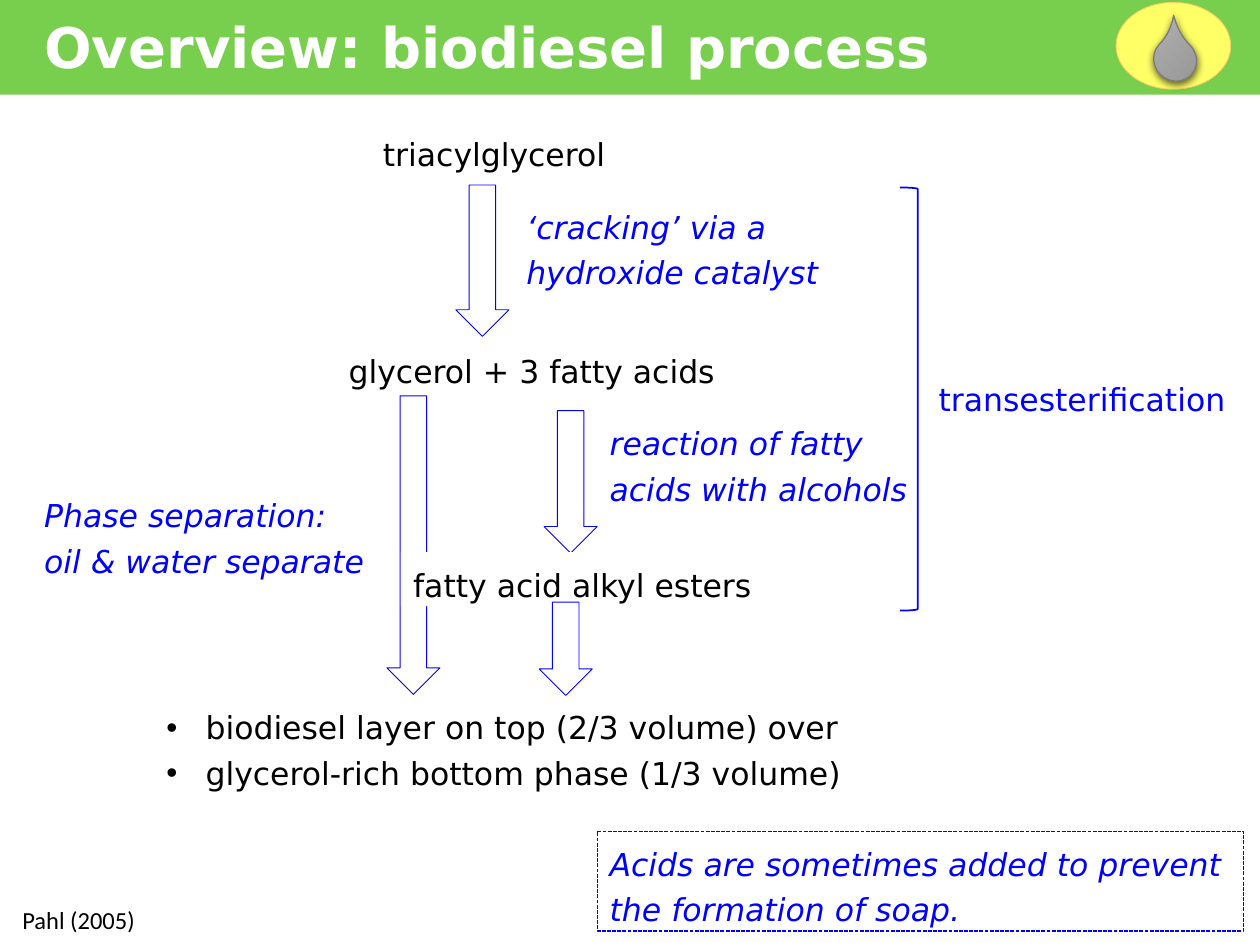
"""Build the biodiesel process overview slide."""
from dataclasses import dataclass

from lxml import etree
from pptx import Presentation
from pptx.dml.color import RGBColor
from pptx.enum.dml import MSO_LINE
from pptx.enum.shapes import MSO_SHAPE
from pptx.enum.text import MSO_ANCHOR, MSO_AUTO_SIZE, PP_ALIGN
from pptx.oxml.ns import qn
from pptx.util import Cm, Pt

RECTANGLE = MSO_SHAPE.RECTANGLE
DOWN_ARROW = MSO_SHAPE.DOWN_ARROW
BRACKET = MSO_SHAPE.RIGHT_BRACKET
OVAL = MSO_SHAPE.OVAL
TEAR = MSO_SHAPE.TEAR
SYS_DASH = MSO_LINE.SQUARE_DOT
TOP = MSO_ANCHOR.TOP
LEFT = PP_ALIGN.LEFT
NO_AUTOFIT = MSO_AUTO_SIZE.NONE

COLOURS = {
    "band": "78CE4D", "white": "FFFFFF", "black": "000000", "blue": "0000FF",
    "sun": "FFFF66", "sun_edge": "FFCC66",
    "drop_top": "AFAFAF", "drop_bottom": "939393", "drop_edge": "7C7C7C",
}
FONT = "DejaVu Sans"
ARROW_WIDTH = 1.07
LINE_HEIGHT = 1.09
TWO_LINES = 2.01


@dataclass
class Label:
    """A text on the slide, in centimetres."""
    lines: list[str]
    left: float
    top: float
    width: float
    height: float = LINE_HEIGHT
    colour: str = "black"
    italic: bool = False
    fill: str | None = None
    edge: str | None = None


@dataclass
class Arrow:
    """A downward process arrow, in centimetres."""
    left: float
    top: float
    height: float


FLOW = [
    Label(["triacylglycerol"], 7.47, 2.44, 5.21),
    Arrow(10.97, 8.28, 2.87),
    Arrow(9.19, 3.73, 3.05),
    Label(["glycerol + 3 fatty acids"], 6.78, 6.81, 8.1),
    Label(["reaction of fatty acids with alcohols"], 12.04, 8.28, 6.78, 2.08, "blue", True),
    Label(["‘cracking’ via a", "hydroxide catalyst"], 10.36, 3.91, 7.39, TWO_LINES, "blue", True),
    Arrow(7.8, 7.98, 6.02),
    Label(["fatty acid alkyl esters"], 8.08, 11.13, 8.46, fill="white"),
    Label(["Phase separation:", "oil & water separate"], 0.64, 9.73, 7.16, TWO_LINES, "blue", True),
    Arrow(10.87, 12.14, 1.88),
    Label(["transesterification"], 18.67, 7.39, 6.58, colour="blue"),
    Label(["Acids are sometimes added to prevent the formation of soap."],
          12.04, 16.76, 13.03, TWO_LINES, "blue", True, edge="blue"),
]
PHASES = ["biodiesel layer on top (2/3 volume) over",
          "glycerol-rich bottom phase (1/3 volume)"]


def rgb(name: str) -> RGBColor:
    """Look up a colour."""
    return RGBColor.from_string(COLOURS[name])


def place(shape, left: float, top: float, width: float, height: float) -> None:
    """Move and size a shape."""
    shape.left, shape.top = Cm(left), Cm(top)
    shape.width, shape.height = Cm(width), Cm(height)


def write(shape, lines: list[str], colour: str, size: float = 18, font: str = FONT,
          bold: bool = False, italic: bool = False, spacing: float = 1.2) -> None:
    """Fill a shape with left-aligned paragraphs."""
    frame = shape.text_frame
    frame.text = "\n".join(lines)
    frame.auto_size = NO_AUTOFIT
    frame.word_wrap = True
    frame.vertical_anchor = TOP
    for paragraph in frame.paragraphs:
        paragraph.alignment = LEFT
        paragraph.line_spacing = spacing
        paragraph.space_before = Pt(0)
        paragraph.font.name, paragraph.font.size = font, Pt(size)
        paragraph.font.bold, paragraph.font.italic = bold, italic
        paragraph.font.color.rgb = rgb(colour)


def draw_shape(shapes, kind, left: float, top: float, width: float, height: float,
               fill: str | None = None, edge: str | None = None, weight: float = 0.5):
    """Add a flat preset shape."""
    shape = shapes.add_shape(kind, Cm(left), Cm(top), Cm(width), Cm(height))
    shape.shadow.inherit = False
    if fill:
        shape.fill.solid()
        shape.fill.fore_color.rgb = rgb(fill)
    else:
        shape.fill.background()
    if edge:
        shape.line.color.rgb = rgb(edge)
        shape.line.width = Pt(weight)
    else:
        shape.line.fill.background()
    return shape


def draw_label(shapes, label: Label) -> None:
    """Add a label, boxed when it has a fill or an edge."""
    box = label.left, label.top, label.width, label.height
    if label.fill or label.edge:
        shape = draw_shape(shapes, RECTANGLE, *box, label.fill, label.edge, 0.75)
        if label.edge:
            shape.line.dash_style = SYS_DASH
    else:
        shape = shapes.add_textbox(*map(Cm, box))
    write(shape, label.lines, label.colour, italic=label.italic)


def draw_droplet(shapes) -> None:
    """Add the shaded droplet on its yellow oval."""
    emblem = shapes.add_group_shape().shapes
    draw_shape(emblem, OVAL, 22.5, 0.05, 2.31, 1.75, "sun", "sun_edge")
    drop = draw_shape(emblem, TEAR, 23.27, 0.76, 0.84, 0.89, edge="drop_edge", weight=0.75)
    drop.rotation = 314.8
    drop.adjustments[0] = 1.465
    drop.fill.gradient()
    drop.fill.gradient_angle = 270
    for stop, name in zip(drop.fill.gradient_stops, ("drop_top", "drop_bottom")):
        stop.color.rgb = rgb(name)
    effects = drop.element.spPr.find(qn("a:effectLst"))
    shadow = etree.SubElement(effects, qn("a:outerShdw"), blurRad=str(Pt(4.5)),
                              dist=str(Pt(1.5)), dir="5400000", rotWithShape="0")
    tint = etree.SubElement(shadow, qn("a:srgbClr"), val=COLOURS["black"])
    etree.SubElement(tint, qn("a:alpha"), val="63000")


def main() -> None:
    """Assemble and save the slide."""
    deck = Presentation()
    deck.slide_width, deck.slide_height = Cm(25.4), Cm(19.05)
    slide = deck.slides.add_slide(deck.slide_layouts[1])
    shapes = slide.shapes
    title, phases = shapes.title, slide.placeholders[1]

    band = draw_shape(shapes, RECTANGLE, 0, 0, 25.43, 1.91, "band")
    title.element.addprevious(band.element)
    place(title, 0.64, 0.13, 18.47, 1.63)
    write(title, ["Overview: biodiesel process"], "white", 32, bold=True, spacing=1)
    title.text_frame.word_wrap = False
    draw_droplet(shapes)

    place(phases, 3.1, 14, 15.04, TWO_LINES)
    write(phases, PHASES, "black")
    for paragraph in phases.text_frame.paragraphs:
        properties = paragraph.font._element.getparent()
        properties.set("marL", str(Cm(0.79)))
        properties.set("indent", str(-Cm(0.79)))
        bullet = etree.Element(qn("a:buChar"), char="•")
        paragraph.font._element.addprevious(bullet)

    for item in FLOW:
        if isinstance(item, Arrow):
            draw_shape(shapes, DOWN_ARROW, item.left, item.top, ARROW_WIDTH, item.height,
                       edge="blue")
        else:
            draw_label(shapes, item)
    draw_shape(shapes, BRACKET, 18.14, 3.78, 0.36, 8.53, edge="blue", weight=1)

    citation = shapes.add_textbox(Cm(0.2), Cm(18.11), Cm(2.82), Cm(0.86))
    write(citation, ["Pahl (2005)"], "black", 14, "Calibri", spacing=1)
    citation.text_frame.word_wrap = False
    deck.save("out.pptx")


if __name__ == "__main__":
    main()
